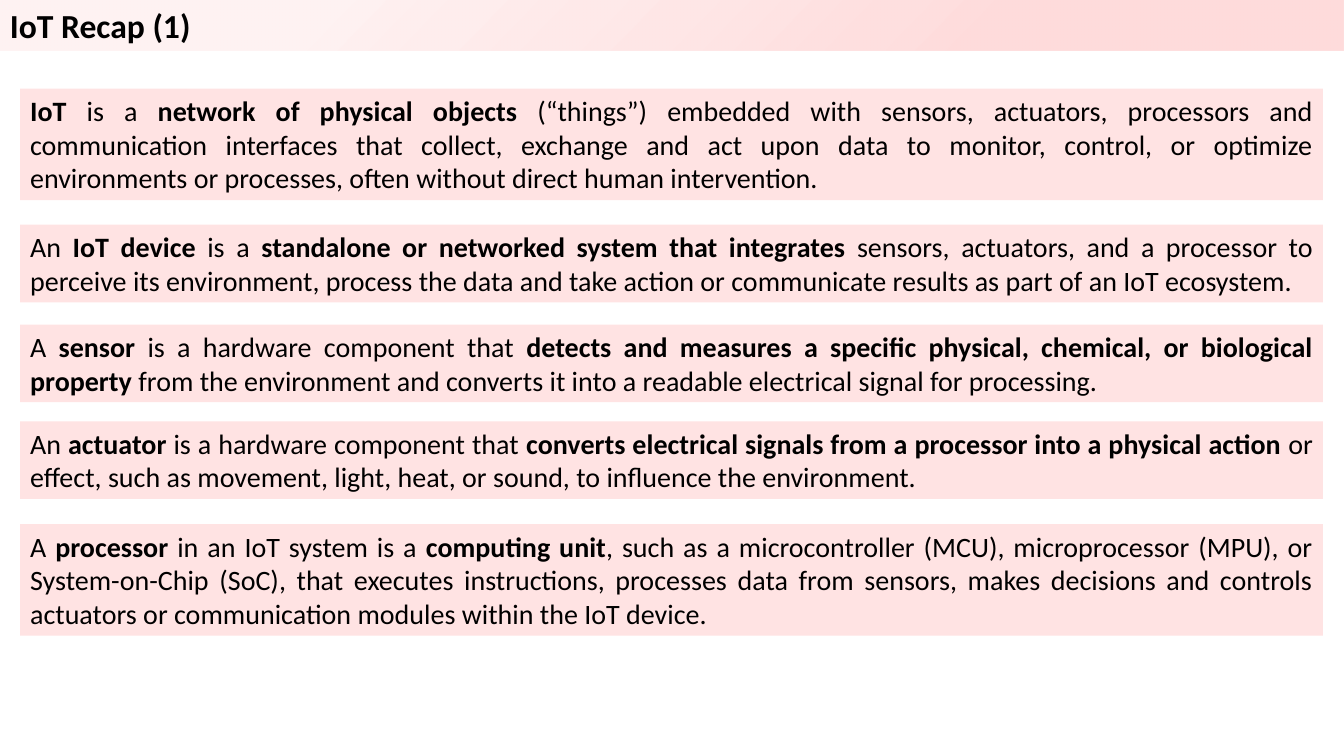
from pptx import Presentation, oxml
from pptx.dml.color import RGBColor
from pptx.enum import shapes, text
from pptx.util import Inches, Pt

TITLE = "**IoT Recap (1)"
NOTES = [
    (0.88, 3, "**IoT **is a **network of physical objects **(“things”) embedded with sensors, "
     "actuators, processors and communication interfaces that collect, exchange and act upon "
     "data to monitor, control, or optimize environments or processes, often without direct "
     "human intervention."),
    (2.23, 2, "An **IoT device** is a **standalone or networked system that integrates **sensors, "
     "actuators, and a processor to perceive its environment, process the data and take action "
     "or communicate results as part of an IoT ecosystem."),
    (3.22, 2, "A **sensor** is a hardware component that **detects and measures a specific "
     "physical, chemical, or biological property** from the environment and converts it into "
     "a readable electrical signal for processing."),
    (4.18, 2, "An **actuator** is a hardware component that **converts electrical signals from "
     "a processor into a physical action **or effect, such as movement, light, heat, or sound, "
     "to influence the environment."),
    (5.2, 3, "A **processor** in an IoT system is a **computing unit**, such as a "
     "microcontroller (MCU), microprocessor (MPU), or System-on-Chip (SoC), that executes "
     "instructions, processes data from sensors, makes decisions and controls actuators or "
     "communication modules within the IoT device."),
]
WIDE, HIGH = 13.33, 7.5
EDGE, NOTE_WIDE = 0.2, 12.92
LINE, PAD = 0.335, 0.1
FONT = "Calibri"
BLACK = RGBColor(0x00, 0x00, 0x00)
PINK = RGBColor(0xFF, 0xE3, 0xE3)
GLOW = """<a:gradFill xmlns:a="http://schemas.openxmlformats.org/drawingml/2006/main" rotWithShape="1">
<a:gsLst>
<a:gs pos="26000"><a:srgbClr val="FF0000"><a:alpha val="14000"/></a:srgbClr></a:gs>
<a:gs pos="76000"><a:srgbClr val="FF0000"><a:alpha val="5000"/></a:srgbClr></a:gs>
</a:gsLst>
<a:path path="circle"><a:fillToRect l="100000" t="100000"/></a:path>
</a:gradFill>"""


def add_box(slide, words, left, top, width, height, size=20, fill=None,
            align=text.PP_ALIGN.JUSTIFY):
    box = slide.shapes.add_shape(shapes.MSO_SHAPE.RECTANGLE, Inches(left), Inches(top),
                                 Inches(width), Inches(height))
    box.shadow.inherit = False
    box.line.fill.background()
    if fill is not None:
        box.fill.solid()
        box.fill.fore_color.rgb = fill
    frame = box.text_frame
    frame.word_wrap = True
    frame.auto_size = text.MSO_AUTO_SIZE.SHAPE_TO_FIT_TEXT
    frame.vertical_anchor = text.MSO_ANCHOR.TOP
    para = frame.paragraphs[0]
    para.alignment = align
    for i, part in enumerate(words.split("**")):
        if part:
            run = para.add_run()
            run.text = part
            run.font.name = FONT
            run.font.size = Pt(size)
            run.font.bold = i % 2 == 1
            run.font.color.rgb = BLACK
    return box


def main():
    deck = Presentation()
    deck.slide_width, deck.slide_height = Inches(WIDE), Inches(HIGH)
    slide = deck.slides.add_slide(deck.slide_layouts[6])
    bar = add_box(slide, TITLE, 0, 0, WIDE, 0.5, size=24, align=text.PP_ALIGN.LEFT)
    bar.element.spPr.prstGeom.addnext(oxml.parse_xml(GLOW))
    for top, lines, words in NOTES:
        add_box(slide, words, EDGE, top, NOTE_WIDE, lines * LINE + PAD, fill=PINK)
    deck.save("out.pptx")


if __name__ == "__main__":
    main()
